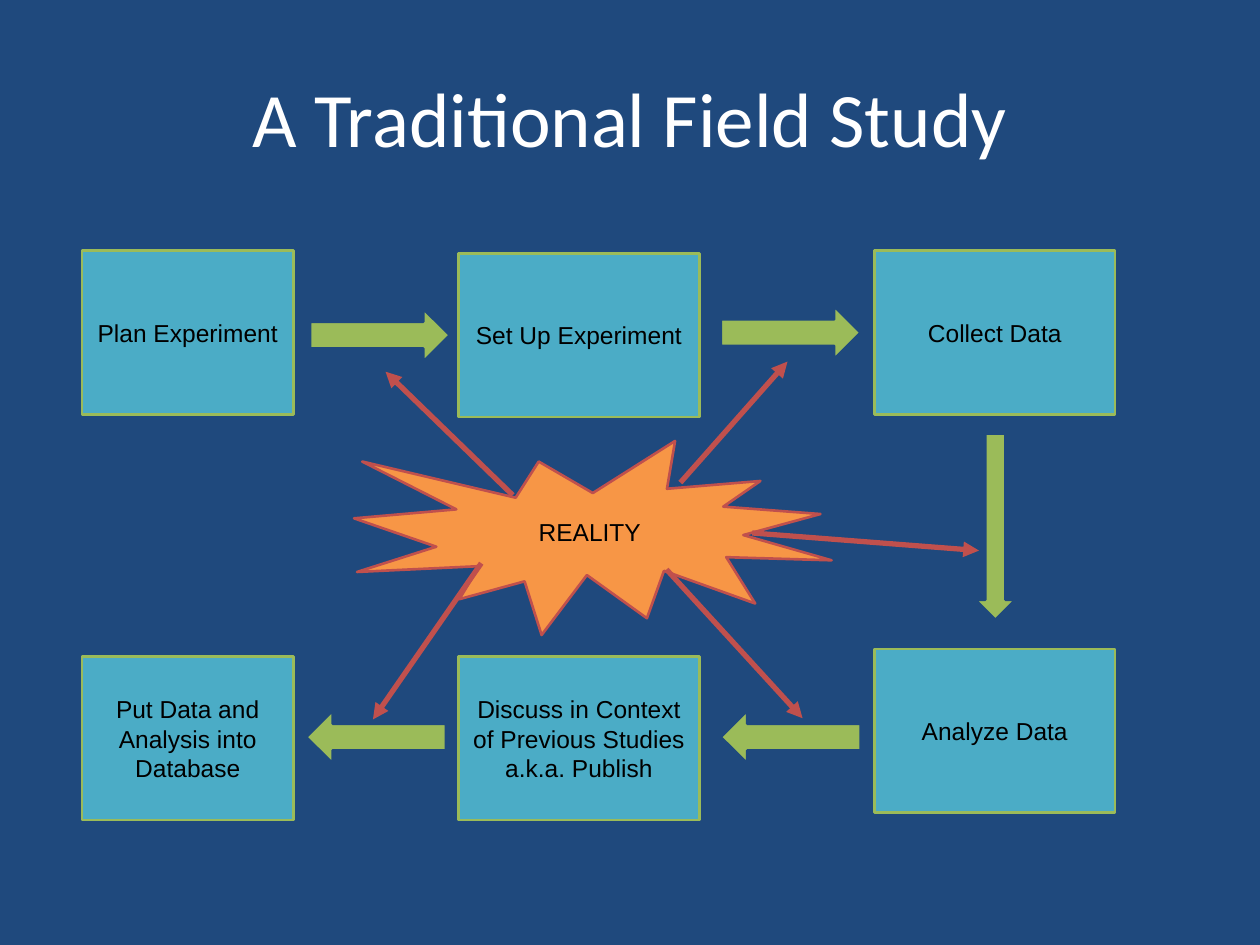
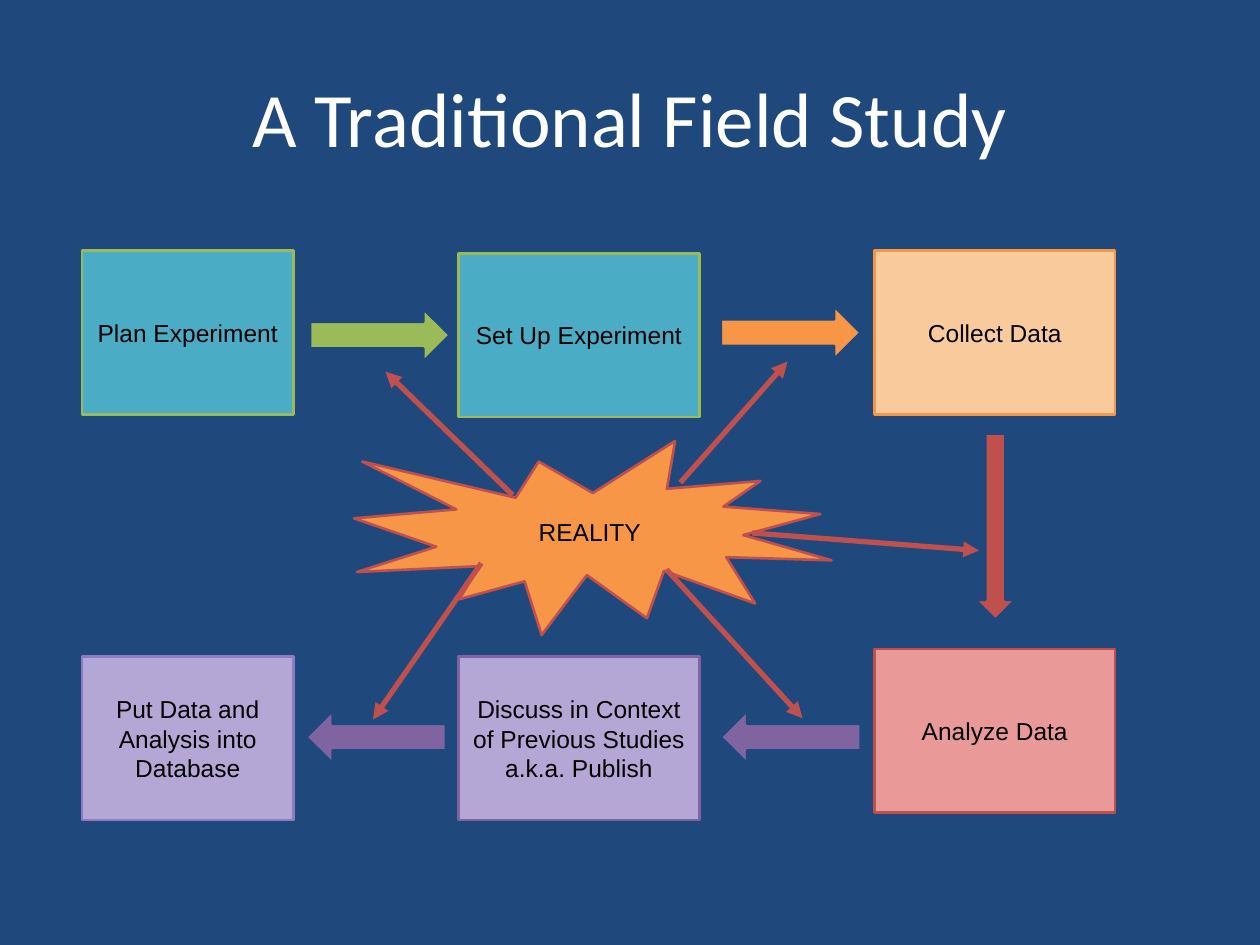
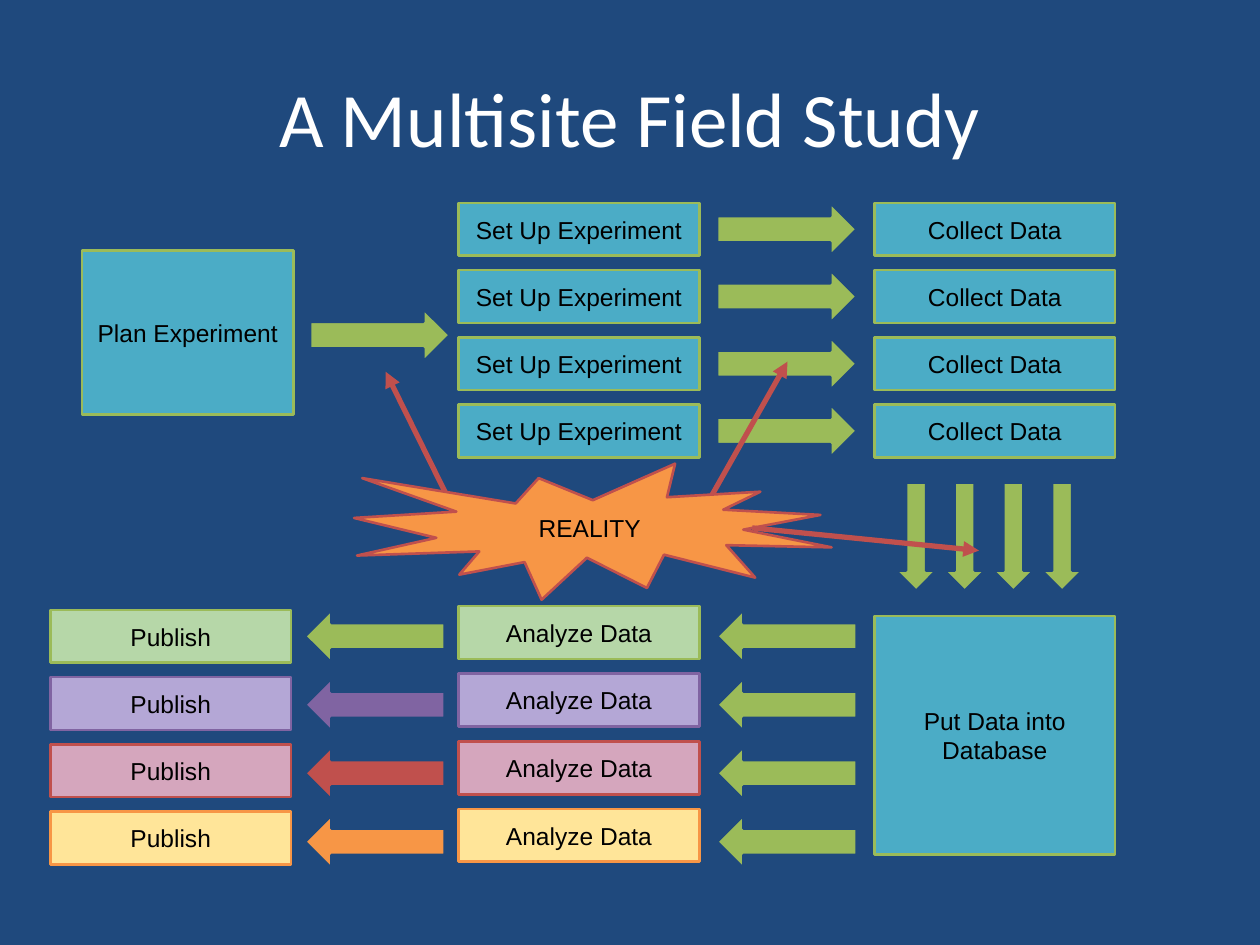
from dataclasses import dataclass
from typing import NamedTuple

from lxml import etree
from pptx import Presentation
from pptx.dml.color import RGBColor
from pptx.enum.shapes import MSO_CONNECTOR, MSO_SHAPE
from pptx.enum.text import MSO_ANCHOR, PP_ALIGN
from pptx.oxml.ns import qn
from pptx.util import Inches, Pt

RECT = MSO_SHAPE.RECTANGLE
ARROW = MSO_SHAPE.RIGHT_ARROW
BURST = MSO_SHAPE.EXPLOSION1
STRAIGHT = MSO_CONNECTOR.STRAIGHT
MIDDLE = MSO_ANCHOR.MIDDLE
CENTER = PP_ALIGN.CENTER

# The slide is a grid of 100 columns by 75 rows of square cells.
SLIDE_W, SLIDE_H = Inches(10), Inches(7.5)
CELL = SLIDE_W / 100

RIGHT, DOWN, LEFT = 0, 90, 180  # headings of block arrows, in degrees


class Style(NamedTuple):
    fill: str
    line: str
    arrow: str  # colour of the block arrow that goes with the box


@dataclass(frozen=True)
class Theme:
    background: str = "1F497D"
    title: str = "FFFFFF"
    text: str = "000000"
    burst: str = "F79646"
    ray: str = "C0504D"
    title_font: str = "Calibri"
    body_font: str = "Arial"
    title_size: float = 44
    body_size: float = 14
    outline: float = 1.5
    ray_width: float = 3
    teal: Style = Style("4BACC6", "9BBB59", "9BBB59")
    green: Style = Style("B6D7A8", "9BBB59", "9BBB59")
    peach: Style = Style("F9CB9C", "F79646", "F79646")
    salmon: Style = Style("EA9999", "C0504D", "C0504D")
    purple: Style = Style("B4A7D6", "8064A2", "8064A2")
    lilac: Style = Style("B4A7D6", "8E7CC3", "8064A2")
    pink: Style = Style("D5A6BD", "C0504D", "C0504D")
    yellow: Style = Style("FFE599", "F79646", "F79646")


THEME = Theme()


class Place(NamedTuple):
    left: float
    top: float
    width: float
    height: float


class Ray(NamedTuple):
    x1: float
    y1: float
    x2: float
    y2: float


class Step(NamedTuple):
    text: str
    place: Place


class Flow(NamedTuple):
    place: Place  # before rotation to the heading
    heading: int


NARROW, WIDE = 16.8, 19.1
TALL, SHORT = 13, 4.2
PLAN_X, SETUP_X, COLLECT_X, PUBLISH_X = 6.5, 36.4, 69.4, 4
ARROW_W, ARROW_H, DOWN_H = 11.1, 4.2, 3.2
SITES = 4

TITLE = Place(5, 3, 90, 12.5)
REALITY = Place(28.1, 35, 37.9, 15.4)
PLAN = Step("Plan Experiment", Place(PLAN_X, 19.9, NARROW, TALL))
PLAN_FLOW = Flow(Place(24.6, 24.5, ARROW_W, ARROW_H), RIGHT)

STEPS = [
    PLAN,
    Step("Set Up Experiment", Place(SETUP_X, 20.1, WIDE, TALL)),
    Step("Collect Data", Place(COLLECT_X, 19.9, WIDE, TALL)),
    Step("Analyze Data", Place(COLLECT_X, 51.5, WIDE, TALL)),
    Step("Discuss in Context of Previous Studies\na.k.a. Publish",
         Place(SETUP_X, 52.1, WIDE, TALL)),
    Step("Put Data and Analysis into Database",
         Place(PLAN_X, 52.1, NARROW, TALL)),
]
# Each flow leads to the step after the one at the same index.
FLOWS = [
    PLAN_FLOW,
    Flow(Place(57.2, 24.3, ARROW_W, ARROW_H), RIGHT),
    Flow(Place(71.6, 40.2, 14.8, DOWN_H), DOWN),
    Flow(Place(57.2, 56.4, ARROW_W, ARROW_H), LEFT),
    Flow(Place(24.3, 56.4, ARROW_W, ARROW_H), LEFT),
]
RAYS = [
    Ray(40.7, 39.3, 30.6, 29.5),
    Ray(54, 38.3, 62.5, 28.7),
    Ray(59.7, 42.3, 77.7, 43.7),
    Ray(52.9, 45.2, 63.7, 57),
    Ray(38.2, 44.7, 29.6, 57.1),
]

# The multisite burst fits between the setup and analysis stacks.
SITE_REALITY = Place(28.1, 36.8, 37.9, 10.8)
SITE_RAYS_BEHIND = [
    Ray(35.4, 39.2, 30.6, 29.5),
    Ray(56.5, 39.3, 62.5, 28.7),
]
SITE_RAY_FRONT = Ray(59.7, 41.9, 77.7, 43.7)


def cells(*values: float) -> list[int]:
    return [round(v * CELL) for v in values]


def spread(first: float, last: float, count: int = SITES) -> list[float]:
    """Equally spaced positions from first to last."""
    return [first + (last - first) * i / (count - 1) for i in range(count)]


def rgb(colour: str) -> RGBColor:
    return RGBColor.from_string(colour)


def write(shape, text: str, *, font: str = THEME.body_font,
          size: float = THEME.body_size, colour: str = THEME.text) -> None:
    """Centre text in a shape, one paragraph a line."""
    tf = shape.text_frame
    tf.word_wrap = True
    tf.vertical_anchor = MIDDLE
    tf.margin_left = tf.margin_right = Inches(0.1)
    tf.margin_top = tf.margin_bottom = Inches(0.1)
    for i, line in enumerate(text.split("\n")):
        p = tf.add_paragraph() if i else tf.paragraphs[0]
        p.alignment = CENTER
        r = p.add_run()
        r.text = line
        r.font.name = font
        r.font.size = Pt(size)
        r.font.color.rgb = rgb(colour)


def add_block(s, kind, place: Place, fill: str, line: str, text: str = ""):
    sp = s.shapes.add_shape(kind, *cells(*place))
    sp.shadow.inherit = False
    sp.fill.solid()
    sp.fill.fore_color.rgb = rgb(fill)
    sp.line.color.rgb = rgb(line)
    sp.line.width = Pt(THEME.outline)
    if text:
        write(sp, text)
    return sp


def add_step(s, step: Step, style: Style = THEME.teal) -> None:
    add_block(s, RECT, step.place, style.fill, style.line, step.text)


def add_flow(s, flow: Flow, style: Style = THEME.teal) -> None:
    sp = add_block(s, ARROW, flow.place, style.arrow, THEME.background)
    sp.rotation = flow.heading


def add_reality(s, place: Place) -> None:
    add_block(s, BURST, place, THEME.burst, THEME.ray, "REALITY")


def add_ray(s, ray: Ray) -> None:
    c = s.shapes.add_connector(STRAIGHT, *cells(*ray))
    c.line.color.rgb = rgb(THEME.ray)
    c.line.width = Pt(THEME.ray_width)
    ln = c._element.spPr.find(qn("a:ln"))
    etree.SubElement(ln, qn("a:tailEnd"), type="triangle")
    etree.SubElement(c._element.spPr, qn("a:effectLst"))


def add_slide(prs, title: str):
    s = prs.slides.add_slide(prs.slide_layouts[6])
    s.background.fill.solid()
    s.background.fill.fore_color.rgb = rgb(THEME.background)
    write(s.shapes.add_textbox(*cells(*TITLE)), title, font=THEME.title_font,
          size=THEME.title_size, colour=THEME.title)
    return s


def add_traditional(prs, styles: list[Style]) -> None:
    s = add_slide(prs, "A Traditional Field Study")
    for step, style in zip(STEPS, styles):
        add_step(s, step, style)
    for flow, style in zip(FLOWS, styles[1:]):
        add_flow(s, flow, style)
    add_reality(s, REALITY)
    for ray in RAYS:
        add_ray(s, ray)


def add_step_stack(s, text: str, left: float, tops: list[float],
                   styles: list[Style]) -> None:
    for top, style in zip(tops, styles):
        add_step(s, Step(text, Place(left, top, WIDE, SHORT)), style)


def add_flow_stack(s, left: float, tops: list[float], heading: int,
                   styles: list[Style]) -> None:
    for top, style in zip(tops, styles):
        add_flow(s, Flow(Place(left, top, ARROW_W, ARROW_H), heading), style)


def add_multisite(prs) -> None:
    s = add_slide(prs, "A Multisite Field Study")
    shared = [THEME.teal] * SITES
    by_site = [THEME.green, THEME.purple, THEME.pink, THEME.yellow]
    upper, lower = spread(16.1, 32.1), spread(48.4, 64.7)

    add_step(s, PLAN)
    add_flow(s, PLAN_FLOW)
    add_step_stack(s, "Set Up Experiment", SETUP_X, upper, shared)
    add_flow_stack(s, 56.9, upper, RIGHT, shared)
    add_step_stack(s, "Collect Data", COLLECT_X, upper, shared)
    for left in spread(68.4, 80):
        add_flow(s, Flow(Place(left, 41, 8.6, DOWN_H), DOWN))
    add_step(s, Step("Put Data into Database",
                     Place(COLLECT_X, 48.9, WIDE, 18.9)))
    add_flow_stack(s, 56.9, lower, LEFT, shared)
    add_step_stack(s, "Analyze Data", SETUP_X, spread(48.1, 64.2), by_site)
    add_flow_stack(s, 24.2, lower, LEFT, by_site)
    add_step_stack(s, "Publish", PUBLISH_X, spread(48.4, 64.4), by_site)

    for ray in SITE_RAYS_BEHIND:
        add_ray(s, ray)
    add_reality(s, SITE_REALITY)
    add_ray(s, SITE_RAY_FRONT)


def main() -> None:
    prs = Presentation()
    prs.slide_width, prs.slide_height = SLIDE_W, SLIDE_H
    add_traditional(prs, [THEME.teal] * len(STEPS))
    add_traditional(prs, [THEME.teal, THEME.teal, THEME.peach, THEME.salmon,
                          THEME.purple, THEME.lilac])
    add_multisite(prs)
    prs.save("out.pptx")


if __name__ == "__main__":
    main()
